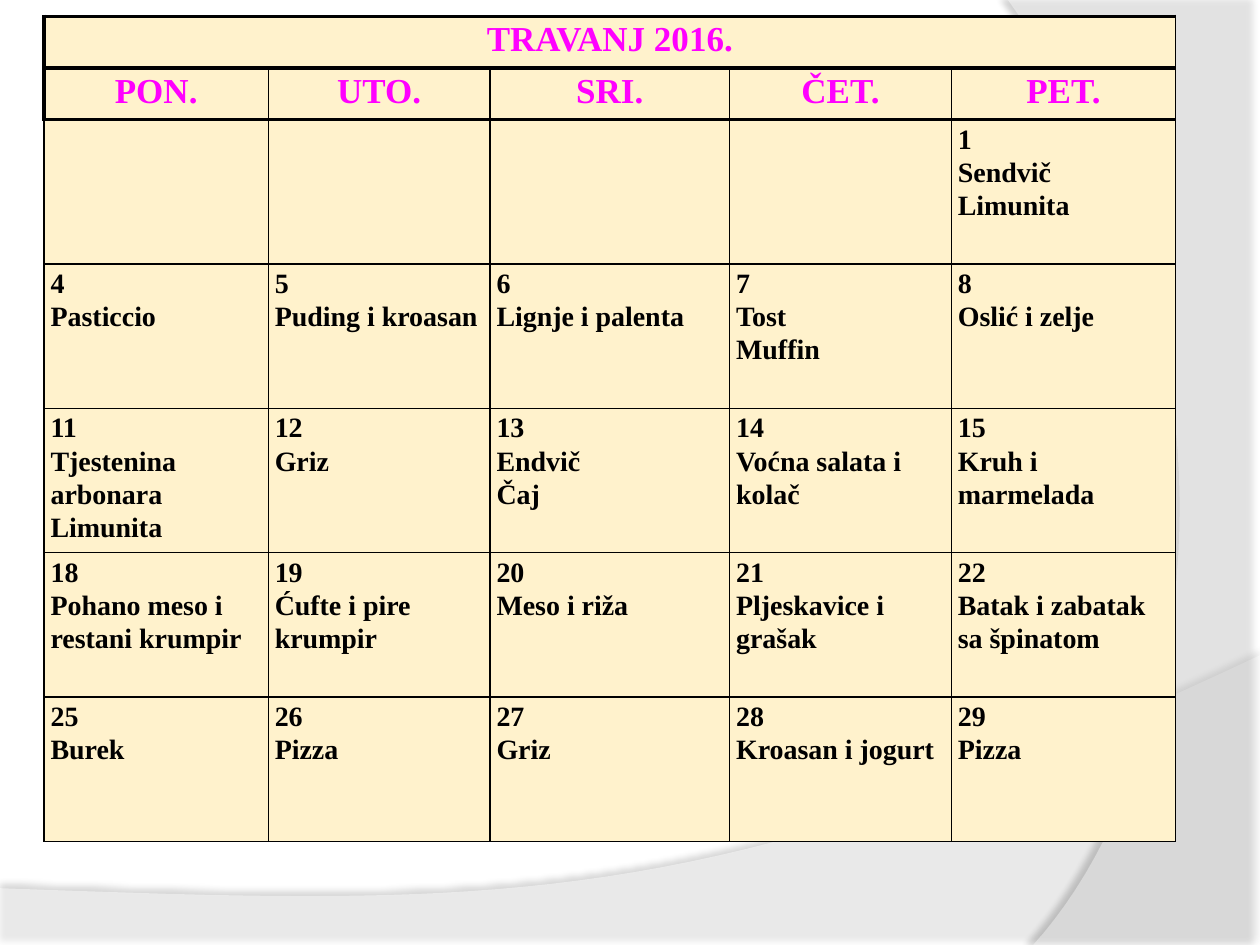
from lxml import etree
from pptx import Presentation
from pptx.dml.color import RGBColor
from pptx.enum.text import PP_ALIGN
from pptx.oxml import parse_xml
from pptx.oxml.ns import nsdecls, qn
from pptx.util import Cm, Pt

CENTER, LEFT = PP_ALIGN.CENTER, PP_ALIGN.LEFT
WHITE = RGBColor(0xFF, 0xFF, 0xFF)
BLACK = RGBColor(0x00, 0x00, 0x00)
CREAM = RGBColor(0xFF, 0xF2, 0xCC)
MAGENTA = RGBColor(0xFF, 0x00, 0xFF)
FONT = "Times New Roman"
THIN, THICK = Pt(1), Pt(2.25)

MONTH = "TRAVANJ 2016."
DAYS = ["PON.", "UTO.", "SRI.", "ČET.", "PET."]
WEEKS = [
    ["", "", "", "", "1\nSendvič\nLimunita"],
    ["4\nPasticcio", "5\nPuding i kroasan", "6\nLignje i palenta",
     "7\nTost\nMuffin", "8\nOslić i zelje"],
    ["11\nTjestenina arbonara\nLimunita", "12\nGriz", "13\nEndvič\nČaj",
     "14\nVoćna salata i kolač", "15\nKruh i marmelada"],
    ["18\nPohano meso i restani krumpir", "19\nĆufte i pire krumpir",
     "20\nMeso i riža", "21\nPljeskavice i grašak",
     "22\nBatak i zabatak sa špinatom"],
    ["25\nBurek", "26\nPizza", "27\nGriz", "28\nKroasan i jogurt", "29\nPizza"],
]
HEADER_ROWS = 2
COLUMN_WIDTHS = [4.52, 4.47, 4.83, 4.47, 4.52]
HEADER_HEIGHT, WEEK_HEIGHT = 1.04, 2.91


def bezier(start, control_1, control_2, end, steps=40):
    """Return points along a cubic curve."""
    points = []
    for step in range(steps + 1):
        t = step / steps
        weights = ((1 - t) ** 3, 3 * t * (1 - t) ** 2, 3 * t * t * (1 - t), t ** 3)
        points.append(tuple(
            sum(w * value for w, value in zip(weights, axis))
            for axis in zip(start, control_1, control_2, end)))
    return points


def add_wave(slide, box, curve, corners, opacity, shadow):
    """Draw a translucent wave; points are fractions of the box (cm)."""
    left, top, width, height = box
    points = [(Cm(left + x * width), Cm(top + y * height))
              for x, y in bezier(*curve) + corners]
    builder = slide.shapes.build_freeform(*points[0])
    builder.add_line_segments(points[1:], close=True)
    wave = builder.convert_to_shape()
    wave.fill.solid()
    wave.fill.fore_color.rgb = WHITE
    wave.line.fill.background()
    color = wave.fill._xPr.find(qn("a:solidFill"))[0]
    etree.SubElement(color, qn("a:alpha"), val=str(opacity * 1000))
    shadow_opacity, blur, distance, angle = shadow
    wave.element.spPr.append(parse_xml(
        f'<a:effectLst {nsdecls("a")}><a:outerShdw blurRad="{Pt(blur)}" '
        f'dist="{Pt(distance)}" dir="{angle * 60000}" algn="ctr" rotWithShape="0">'
        f'<a:srgbClr val="{BLACK}"><a:alpha val="{shadow_opacity * 1000}"/>'
        '</a:srgbClr></a:outerShdw></a:effectLst>'))


def set_borders(cell, row, column):
    widths = {
        "lnL": THICK if column == 0 and row < HEADER_ROWS else THIN,
        "lnR": THIN,
        "lnT": THICK if row <= HEADER_ROWS else THIN,
        "lnB": THICK if row < HEADER_ROWS else THIN,
    }
    properties = cell._tc.get_or_add_tcPr()
    for side, width in widths.items():
        properties.append(parse_xml(
            f'<a:{side} {nsdecls("a")} w="{width}"><a:solidFill>'
            f'<a:srgbClr val="{BLACK}"/></a:solidFill></a:{side}>'))


def fill_cell(cell, text, is_header):
    cell.fill.solid()
    cell.fill.fore_color.rgb = CREAM
    cell.margin_left = cell.margin_right = Cm(0.13)
    cell.margin_top = Cm(0.03 if is_header else 0.05)
    cell.margin_bottom = Cm(0 if is_header else 0.05)
    if not text:
        return
    for index, line in enumerate(text.split("\n")):
        frame = cell.text_frame
        paragraph = frame.add_paragraph() if index else frame.paragraphs[0]
        paragraph.alignment = CENTER if is_header else LEFT
        paragraph.line_spacing = 1.07
        run = paragraph.add_run()
        run.text = line
        run.font.name = FONT
        run.font.bold = True
        run.font.size = Pt(20 if is_header else 16)
        run.font.color.rgb = MAGENTA if is_header else BLACK


def add_menu_calendar(slide, left, top):
    rows = [[MONTH] + [""] * (len(DAYS) - 1), DAYS] + WEEKS
    heights = [HEADER_HEIGHT] * HEADER_ROWS + [WEEK_HEIGHT] * len(WEEKS)
    table = slide.shapes.add_table(
        len(rows), len(DAYS), Cm(left), Cm(top),
        Cm(sum(COLUMN_WIDTHS)), Cm(sum(heights))).table
    table.first_row = table.horz_banding = False
    for column, width in zip(table.columns, COLUMN_WIDTHS):
        column.width = Cm(width)
    for row, height in zip(table.rows, heights):
        row.height = Cm(height)
    table.cell(0, 0).merge(table.cell(0, len(DAYS) - 1))
    for r, texts in enumerate(rows):
        for c, text in enumerate(texts):
            cell = table.cell(r, c)
            set_borders(cell, r, c)
            fill_cell(cell, text, r < HEADER_ROWS)


def main():
    presentation = Presentation()
    presentation.slide_width, presentation.slide_height = Cm(25.4), Cm(19.05)
    slide = presentation.slides.add_slide(presentation.slide_layouts[6])
    add_wave(slide, (0, 13.21, 25.4, 5.87),
             [(1, 0), (0.56, 0.9), (0.39, 0.86), (0, 0.8)],
             [(0, 1), (1, 1)], 45, (35, 4, 3.5, 270))
    add_wave(slide, (20.32, 0, 5.08, 19.05),
             [(0.1, 1), (0.68, 0.83), (1.09, 0.4), (0, 0)],
             [(1, 0), (1, 1)], 40, (45, 4, 4, 180))
    add_menu_calendar(slide, 0.89, 0.33)
    presentation.save("out.pptx")


if __name__ == "__main__":
    main()
